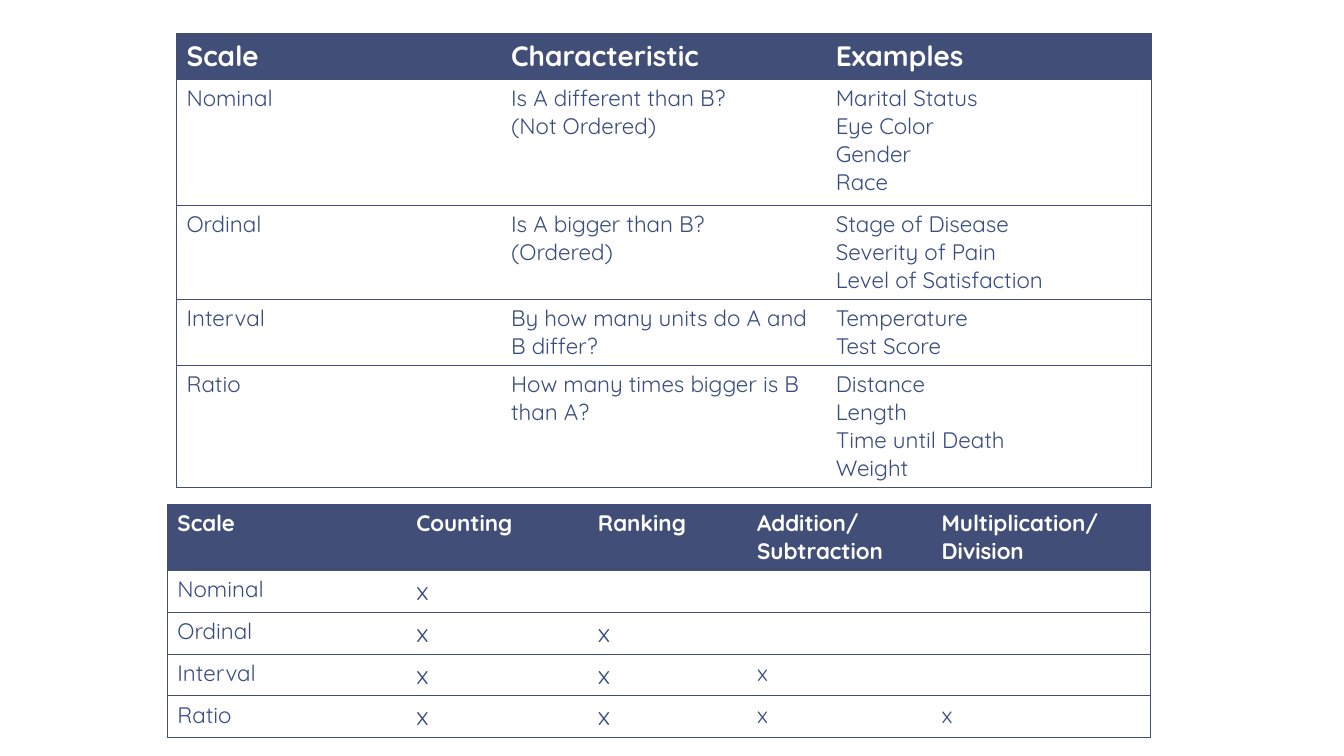
from lxml.etree import SubElement
from pptx import Presentation
from pptx.dml.color import RGBColor
from pptx.oxml.ns import qn
from pptx.util import Inches, Pt

NAVY = RGBColor(0x41, 0x4E, 0x77)
INK = RGBColor(0x37, 0x4C, 0x81)
WHITE = RGBColor(0xFF, 0xFF, 0xFF)
FONT = "Quicksand"
BODY_SIZE = 16
MARK = "x"
MARK_SIZES = {1: 18, 2: 18, 3: 16, 4: 16}

DEFINITIONS = [
    ("Scale", "Characteristic", "Examples"),
    ("Nominal", "Is A different than B?\n(Not Ordered)",
     "Marital Status\nEye Color\nGender\nRace"),
    ("Ordinal", "Is A bigger than B?\n(Ordered)",
     "Stage of Disease\nSeverity of Pain\nLevel of Satisfaction"),
    ("Interval", "By how many units do A and B differ?", "Temperature\nTest Score"),
    ("Ratio", "How many times bigger is B than A?",
     "Distance\nLength\nTime until Death\nWeight"),
]
OPERATIONS = ["Counting", "Ranking", "Addition/ Subtraction", "Multiplication/ Division"]
ALLOWED_OPERATIONS = {"Nominal": 1, "Ordinal": 2, "Interval": 3, "Ratio": 4}

DEFINITION_WIDTHS = [3.22, 3.22, 3.23]
DEFINITION_HEIGHTS = [0.46, 1.25, 0.93, 0.65, 1.21]
OPERATION_WIDTHS = [2.37, 1.8, 1.58, 1.83, 2.17]
OPERATION_HEIGHTS = [0.66] + [0.41] * 4


def set_border(cell, side, visible):
    """Draw or hide one side of a cell."""
    line = SubElement(cell._tc.get_or_add_tcPr(), qn(f"a:ln{side}"), w=str(Pt(0.5)))
    if visible:
        fill = SubElement(line, qn("a:solidFill"))
        SubElement(fill, qn("a:srgbClr"), val=str(NAVY))
    else:
        SubElement(line, qn("a:noFill"))


def add_scale_table(slide, rows, left, top, widths, heights, header_size):
    """Add a table with a navy header and horizontal rules."""
    table = slide.shapes.add_table(
        len(rows), len(widths), Inches(left), Inches(top),
        Inches(sum(widths)), Inches(sum(heights))).table
    table.horz_banding = False
    for column, width in zip(table.columns, widths):
        column.width = Inches(width)
    for row, height in zip(table.rows, heights):
        row.height = Inches(height)
    for r, texts in enumerate(rows):
        for c, text in enumerate(texts):
            cell = table.cell(r, c)
            cell.text = text
            borders = {"L": c == 0, "R": c == len(widths) - 1, "T": True, "B": True}
            for side, visible in borders.items():
                set_border(cell, side, visible)
            cell.fill.solid()
            cell.fill.fore_color.rgb = WHITE if r else NAVY
            body_size = MARK_SIZES[c] if text == MARK else BODY_SIZE
            for paragraph in cell.text_frame.paragraphs:
                font = paragraph.font
                font.name = FONT
                font.size = Pt(body_size if r else header_size)
                font.bold = r == 0
                font.color.rgb = INK if r else WHITE


def main():
    """Build the slide on scales of measurement."""
    presentation = Presentation()
    presentation.slide_width = Inches(13.33)
    presentation.slide_height = Inches(7.5)
    slide = presentation.slides.add_slide(presentation.slide_layouts[6])
    operation_rows = [["Scale"] + OPERATIONS]
    for scale, count in ALLOWED_OPERATIONS.items():
        operation_rows.append([scale] + [MARK] * count + [""] * (len(OPERATIONS) - count))
    add_scale_table(slide, DEFINITIONS, 1.75, 0.33,
                    DEFINITION_WIDTHS, DEFINITION_HEIGHTS, 20)
    add_scale_table(slide, operation_rows, 1.66, 5,
                    OPERATION_WIDTHS, OPERATION_HEIGHTS, 16)
    presentation.save("out.pptx")


if __name__ == "__main__":
    main()
